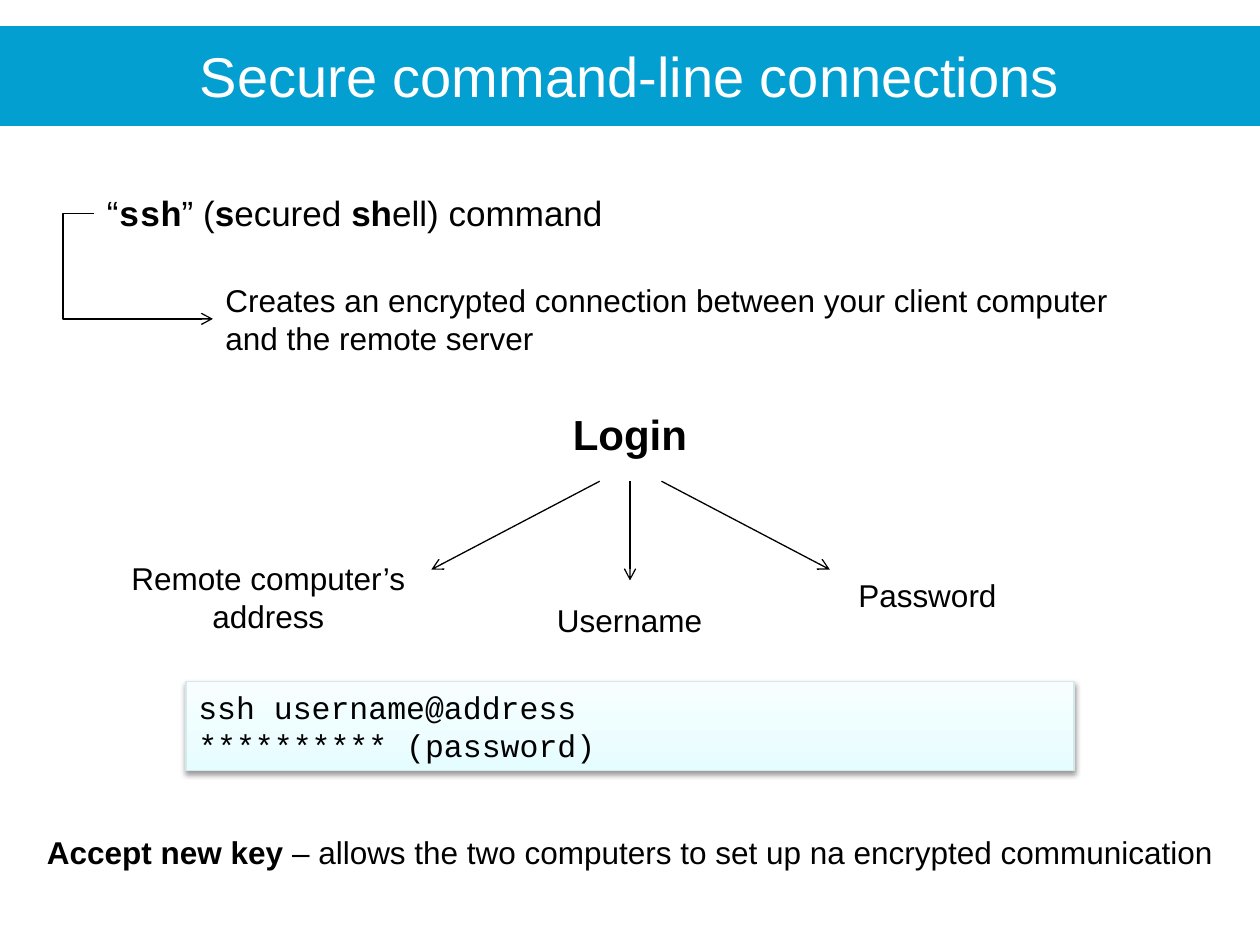
from lxml import etree
from pptx import Presentation
from pptx import util as u
from pptx.dml import color
from pptx.enum import shapes, text
from pptx.oxml import ns

COLOURS = {
    "banner": "039FD0",
    "white": "FFFFFF",
    "black": "000000",
    "code_bottom": "E6FDFF",
    "code_top": "F8FEFF",
    "code_border": "D5E8EA",
}
SANS, MONO = "Arial", "Courier New"
LEFT, CENTRE = text.PP_ALIGN.LEFT, text.PP_ALIGN.CENTER


def rgb(name):
    return color.RGBColor.from_string(COLOURS[name])


def add_element(parent, tag, **attributes):
    return etree.SubElement(parent, ns.qn(tag), attributes)


class SlideBuilder:
    def __init__(self, slide):
        self.slide = slide
        self.line_width = u.Pt(0.75)

    def fill_text(self, frame, paragraphs, size, align=LEFT, colour="black"):
        """Each paragraph is a list of runs: (words, bold, font)."""
        frame.word_wrap = True
        for index, runs in enumerate(paragraphs):
            para = frame.add_paragraph() if index else frame.paragraphs[0]
            para.alignment = align
            for words, bold, font in runs:
                span = para.add_run()
                span.text = words
                span.font.name = font
                span.font.size = u.Pt(size)
                span.font.bold = bold
                span.font.color.rgb = rgb(colour)

    def text_box(self, area, runs, size=18, align=CENTRE, colour="black"):
        box = self.slide.shapes.add_textbox(*map(u.Pt, area))
        self.fill_text(box.text_frame, [runs], size, align, colour)

    def rectangle(self, area):
        box = self.slide.shapes.add_shape(
            shapes.MSO_SHAPE.RECTANGLE, *map(u.Pt, area))
        box.shadow.inherit = False
        return box

    def banner(self, area):
        box = self.rectangle(area)
        box.fill.solid()
        box.fill.fore_color.rgb = rgb("banner")
        box.line.fill.background()

    def code_panel(self, area, lines):
        box = self.rectangle(area)
        box.fill.gradient()
        box.fill.gradient_angle = 90
        for stop, name in zip(box.fill.gradient_stops,
                              ("code_bottom", "code_top")):
            stop.color.rgb = rgb(name)
        box.line.color.rgb = rgb("code_border")
        box.line.width = self.line_width
        effects = box.element.spPr.find(ns.qn("a:effectLst"))
        shadow = add_element(effects, "a:outerShdw", blurRad=str(u.Pt(3.1)),
                             dist=str(u.Pt(1.6)), dir="5400000",
                             rotWithShape="0")
        shade = add_element(shadow, "a:srgbClr", val=COLOURS["black"])
        add_element(shade, "a:alpha", val="38000")
        box.text_frame.vertical_anchor = text.MSO_ANCHOR.MIDDLE
        self.fill_text(box.text_frame,
                       [[(line, False, MONO)] for line in lines], 18)

    def arrow(self, start, end, bend=None):
        """Straight arrow, or an elbow whose upright is at bend times the width."""
        kind = shapes.MSO_CONNECTOR
        line = self.slide.shapes.add_connector(
            kind.STRAIGHT if bend is None else kind.ELBOW,
            *map(u.Pt, (*start, *end)))
        line.line.color.rgb = rgb("black")
        line.line.width = self.line_width
        properties = line.element.spPr
        add_element(properties.find(ns.qn("a:ln")), "a:tailEnd", type="arrow")
        add_element(properties, "a:effectLst")
        if bend is not None:
            geometry = properties.find(ns.qn("a:prstGeom"))
            guides = geometry.find(ns.qn("a:avLst"))
            if guides is None:
                guides = add_element(geometry, "a:avLst")
            add_element(guides, "a:gd", name="adj1",
                        fmla=f"val {round(bend * 100000)}")


def main():
    deck = Presentation()
    deck.slide_width, deck.slide_height = u.Pt(720), u.Pt(540)
    page = SlideBuilder(deck.slides.add_slide(deck.slide_layouts[6]))

    page.banner((0, 15, 720, 57))
    page.text_box((82, 20.2, 556, 46),
                  [("Secure command-line connections", False, SANS)],
                  size=32, colour="white")

    page.text_box((54, 106, 306, 31.5), [
        ("“", False, SANS), ("ssh", True, MONO), ("” (", False, SANS),
        ("s", True, SANS), ("ecured ", False, SANS),
        ("sh", True, SANS), ("ell) command", False, SANS),
    ], size=20, align=LEFT)
    page.text_box((121.7, 157, 544.3, 51), [
        ("Creates an encrypted connection between your client computer "
         "and the remote server", False, SANS)], align=LEFT)
    page.arrow((54, 121.8), (121.7, 182.2), bend=-0.265)

    page.text_box((314.6, 229.7, 90.8, 36), [("Login", True, SANS)], size=24)
    login_parts = [
        ("Remote computer’s address", (59.8, 316, 187, 51),
         (342.7, 275), (246.5, 325.5)),
        ("Username", (291.8, 340, 136, 29), (360, 275), (360, 331.7)),
        ("Password", (439.2, 325.5, 181.5, 29), (378, 275), (474.2, 325.5)),
    ]
    for label, area, start, end in login_parts:
        page.text_box(area, [(label, False, SANS)])
        page.arrow(start, end)

    page.code_panel((106.2, 389.5, 507.6, 51),
                    ["ssh username@address", "********** (password)"])
    page.text_box((13.5, 472.5, 693, 29), [
        ("Accept new key ", True, SANS),
        ("– allows the two computers to set up na encrypted communication",
         False, SANS)])

    deck.save("out.pptx")


if __name__ == "__main__":
    main()
